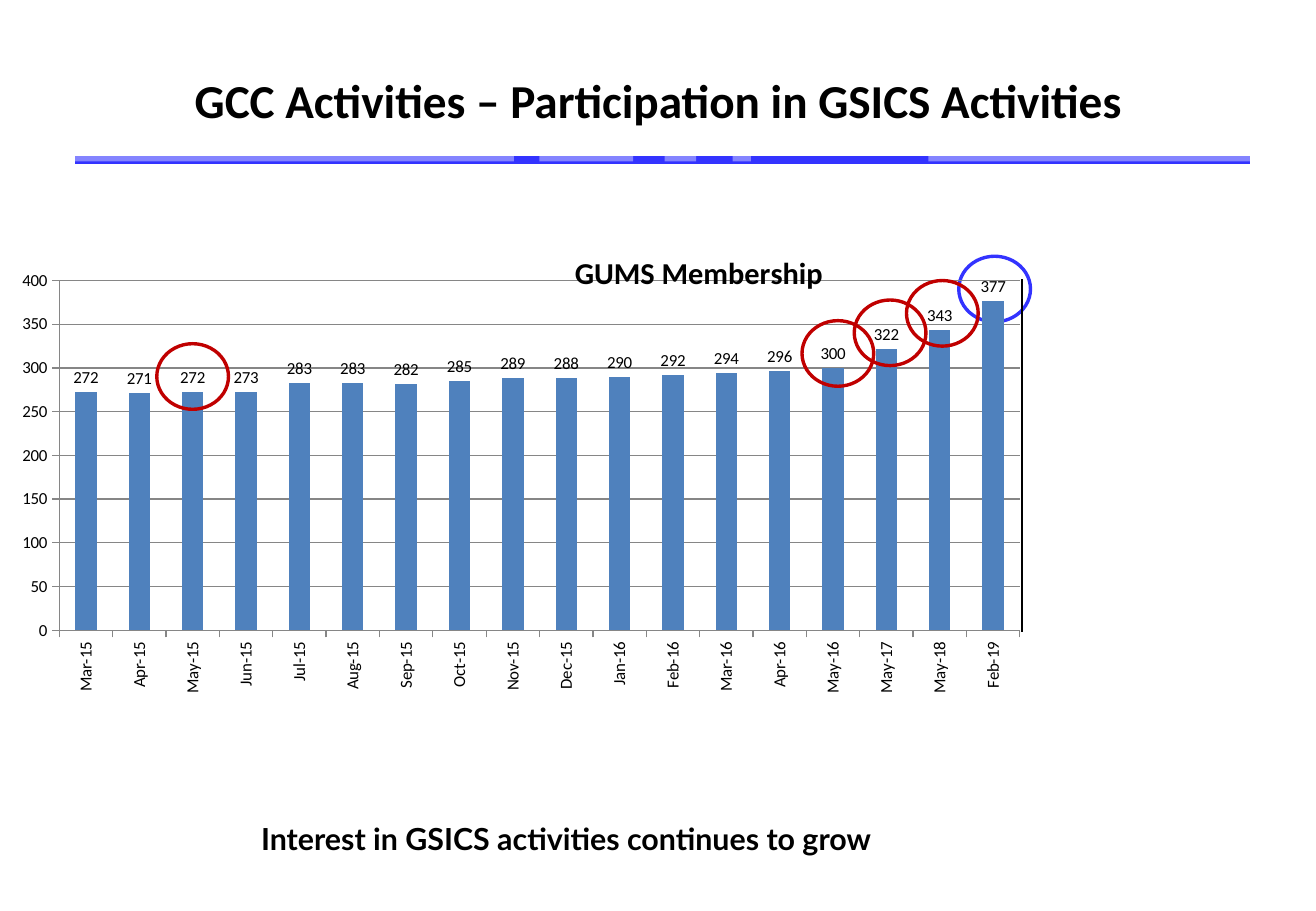
"""Build the GSICS participation slide with its membership chart."""
from dataclasses import dataclass
from typing import Any

from lxml import etree
from pptx import Presentation
from pptx import util as u
from pptx.chart.data import CategoryChartData
from pptx.dml.color import RGBColor
from pptx.enum import chart as ch, shapes, text
from pptx.oxml.ns import qn

SCALE = 9144
BLACK, WHITE, BLUE, RED = "000000", "FFFFFF", "3333FF", "C00000"
BAR, GREY = "4F81BD", "868686"


@dataclass(frozen=True)
class Box:
    left: int
    top: int
    width: int
    height: int


@dataclass(frozen=True)
class Ring:
    left: int
    top: int
    color: str


BANDS = [Box(x, 119, w, 14) for x, w in
         [(1, 422), (444, 77), (547, 26), (603, 15), (764, 320)]]
LAST = Ring(789, 211, BLUE)
RINGS = [Ring(746, 231, RED), Ring(703, 247, RED),
         Ring(660, 264, RED), Ring(129, 283, RED)]
MEMBERS = {
    "Mar-15": 272, "Apr-15": 271, "May-15": 272, "Jun-15": 273,
    "Jul-15": 283, "Aug-15": 283, "Sep-15": 282, "Oct-15": 285,
    "Nov-15": 289, "Dec-15": 288, "Jan-16": 290, "Feb-16": 292,
    "Mar-16": 294, "Apr-16": 296, "May-16": 300, "May-17": 322,
    "May-18": 343, "Feb-19": 377,
}


def px(size: int) -> u.Emu:
    return u.Emu(size * SCALE)


def spot(box: Box) -> tuple[u.Emu, ...]:
    return px(box.left), px(box.top), px(box.width), px(box.height)


def rgb(color: str) -> RGBColor:
    return RGBColor.from_string(color)


def style(font: Any, size: int, bold: bool = False, face: str = "Calibri") -> None:
    font.name, font.size, font.bold = face, u.Pt(size), bold
    font.color.rgb = rgb(BLACK)


def write(frame: Any, words: str, size: int, face: str = "Calibri") -> Any:
    para = frame.paragraphs[0]
    run = para.add_run()
    run.text = words
    style(run.font, size, True, face)
    return para


def stroke(line: Any, color: str, width: float) -> None:
    line.color.rgb = rgb(color)
    line.width = u.Pt(width)


def rule(slide: Any, box: Box, color: str, width: float) -> None:
    line = slide.shapes.add_connector(
        shapes.MSO_CONNECTOR.STRAIGHT, px(box.left), px(box.top),
        px(box.left + box.width), px(box.top + box.height))
    stroke(line.line, color, width)
    etree.SubElement(line.element.spPr, qn("a:effectLst"))


def band(slide: Any, box: Box) -> None:
    shape = slide.shapes.add_shape(shapes.MSO_SHAPE.RECTANGLE, *spot(box))
    shape.shadow.inherit = False
    shape.fill.solid()
    shape.fill.fore_color.rgb = rgb(WHITE)
    shape.line.fill.background()
    tint = shape.element.spPr.find(qn("a:solidFill"))[0]
    etree.SubElement(tint, qn("a:alpha"), val="40000")


def circle(slide: Any, ring: Ring) -> None:
    box = Box(ring.left, ring.top, 59, 54)
    shape = slide.shapes.add_shape(shapes.MSO_SHAPE.OVAL, *spot(box))
    shape.shadow.inherit = False
    shape.fill.background()
    stroke(shape.line, ring.color, 2)


def place(node: Any, index: int, **parts: Any) -> None:
    old = node.find(qn("c:layout"))
    if old is not None:
        node.remove(old)
    layout = etree.Element(qn("c:layout"))
    manual = etree.SubElement(layout, qn("c:manualLayout"))
    for name, value in parts.items():
        etree.SubElement(manual, qn(f"c:{name}"), val=str(value))
    node.insert(index, layout)


def graph(slide: Any, box: Box) -> None:
    data = CategoryChartData(number_format="General")
    data.categories = list(MEMBERS)
    data.add_series("Series 1", list(MEMBERS.values()))
    chart = slide.shapes.add_chart(
        ch.XL_CHART_TYPE.COLUMN_CLUSTERED, *spot(box), data).chart
    style(chart.font, 10)
    chart.has_legend = False
    chart.has_title = True
    write(chart.chart_title.text_frame, "GUMS Membership", 18)
    root = chart.element
    place(root.find(f".//{qn('c:title')}"), 1,
          xMode="edge", yMode="edge", x=0.48, y=0.07)
    area = root.find(f".//{qn('c:plotArea')}")
    place(area, 0, layoutTarget="inner", xMode="edge", yMode="edge",
          x=0.05, y=0.14, w=0.81, h=0.72)

    plot = chart.plots[0]
    plot.gap_width = 150
    plot.vary_by_categories = False
    fill = plot.series[0].format.fill
    fill.solid()
    fill.fore_color.rgb = rgb(BAR)
    plot.has_data_labels = True
    labels = plot.data_labels
    labels.show_value = True
    labels.position = ch.XL_LABEL_POSITION.OUTSIDE_END
    labels.number_format, labels.number_format_is_linked = "General", False
    style(labels.font, 10)

    months, scale = chart.category_axis, chart.value_axis
    for axis in (months, scale):
        axis.major_tick_mark = ch.XL_TICK_MARK.OUTSIDE
        axis.minor_tick_mark = ch.XL_TICK_MARK.NONE
        stroke(axis.format.line, GREY, 0.75)
        style(axis.tick_labels.font, 10)
    months.tick_label_position = ch.XL_TICK_LABEL_POSITION.LOW
    body = area.find(f"{qn('c:catAx')}/{qn('c:txPr')}/{qn('a:bodyPr')}")
    body.set("rot", "-5400000")
    scale.minimum_scale, scale.maximum_scale, scale.major_unit = 0, 400, 50
    scale.has_major_gridlines = True
    stroke(scale.major_gridlines.format.line, GREY, 0.75)


def main() -> None:
    deck = Presentation()
    deck.slide_width, deck.slide_height = px(1083), px(750)
    slide = deck.slides.add_slide(deck.slide_layouts[5])

    title = slide.shapes.title
    title.left, title.top, title.width, title.height = spot(Box(54, 30, 975, 104))
    title.text_frame.vertical_anchor = text.MSO_ANCHOR.MIDDLE
    para = write(title.text_frame, "GCC Activities – Participation in GSICS Activities", 28)
    para.alignment = text.PP_ALIGN.CENTER

    rule(slide, Box(62, 132, 967, 0), BLUE, 4.5)
    for box in BANDS:
        band(slide, box)

    note = slide.shapes.add_textbox(*spot(Box(205, 670, 643, 40))).text_frame
    note.word_wrap = True
    note.auto_size = text.MSO_AUTO_SIZE.SHAPE_TO_FIT_TEXT
    write(note, "Interest in GSICS activities continues to grow", 18, "Lato")

    circle(slide, LAST)
    graph(slide, Box(0, 175, 976, 400))
    rule(slide, Box(841, 230, 0, 290), BLACK, 0.75)
    for ring in RINGS:
        circle(slide, ring)
    deck.save("out.pptx")


if __name__ == "__main__":
    main()
